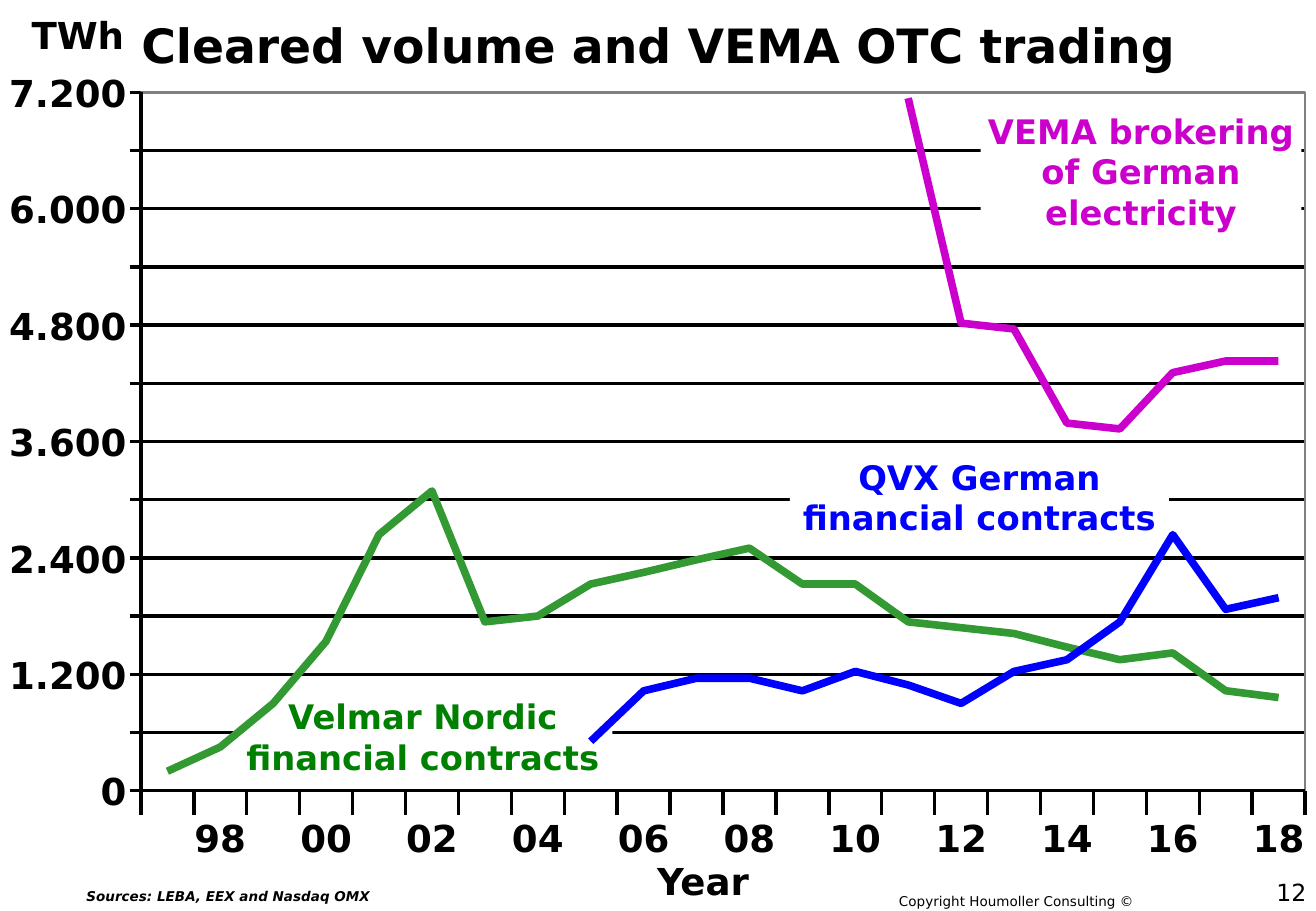
from pptx import Presentation
from pptx.dml.color import RGBColor
from pptx.enum.shapes import MSO_CONNECTOR as Connector, MSO_SHAPE as Shape
from pptx.enum.text import MSO_ANCHOR as Anchor, PP_ALIGN as Align
from pptx.oxml.ns import qn
from pptx.util import Inches, Pt
from lxml import etree

FONT = "DejaVu Sans"
BLACK, WHITE, GREY = "000000", "FFFFFF", "808080"
MAGENTA, GREEN, DARK_GREEN, BLUE = "CC00CC", "339933", "008000", "0000FF"

# Plot area in inches, value axis in TWh, one category per year
LEFT, TOP, WIDTH, HEIGHT = 1.16, 0.76, 9.58, 5.75
RIGHT, BOTTOM = LEFT + WIDTH, TOP + HEIGHT
AXIS_MAX, GRID_STEP, LABEL_STEP = 7200, 600, 1200
FIRST_YEAR, LAST_YEAR = 1997, 2018
YEAR_COUNT = LAST_YEAR - FIRST_YEAR + 1
YEAR_WIDTH = WIDTH / YEAR_COUNT

# First year and yearly volumes in TWh
BROKERED = (2011, [7140, 4820, 4760, 3790, 3730, 4310, 4430, 4430])
NORDIC = (1997, [200, 450, 900, 1540, 2640, 3090, 1740, 1800, 2130, 2250, 2380,
                 2500, 2130, 2130, 1740, 1680, 1620, 1480, 1350, 1420, 1030, 960])
GERMAN = (2005, [510, 1030, 1160, 1160, 1030, 1230, 1090, 900, 1230, 1350, 1740,
                 2640, 1870, 1990])


def colour(hex_string):
    return RGBColor.from_string(hex_string)


def year_left(year):
    return LEFT + (year - FIRST_YEAR) * YEAR_WIDTH


def value_top(value):
    return BOTTOM - value / AXIS_MAX * HEIGHT


class SlideBuilder:
    def __init__(self, presentation):
        self.slide = presentation.slides.add_slide(presentation.slide_layouts[5])
        self.shapes = self.slide.shapes

    def format_text(self, shape, text, size, color=BLACK, align=Align.CENTER,
                    bold=True, italic=False, anchor=Anchor.TOP):
        frame = shape.text_frame
        frame.text = text
        frame.word_wrap = False
        frame.vertical_anchor = anchor
        for paragraph in frame.paragraphs:
            paragraph.alignment = align
            for run in paragraph.runs:
                font = run.font
                font.name, font.size = FONT, Pt(size)
                font.bold, font.italic = bold, italic
                font.color.rgb = colour(color)

    def title(self, text, box):
        shape = self.shapes.title
        shape.left, shape.top, shape.width, shape.height = map(Inches, box)
        shape.fill.solid()
        shape.fill.fore_color.rgb = colour(WHITE)
        self.format_text(shape, text, 28, anchor=Anchor.MIDDLE)

    def text(self, text, box, size, inset=True, **style):
        shape = self.shapes.add_textbox(*map(Inches, box))
        if not inset:
            frame = shape.text_frame
            frame.margin_left = frame.margin_right = 0
            frame.margin_top = frame.margin_bottom = 0
        self.format_text(shape, text, size, **style)

    def line(self, x1, y1, x2, y2):
        connector = self.shapes.add_connector(
            Connector.STRAIGHT, *map(Inches, (x1, y1, x2, y2)))
        connector.line.color.rgb = colour(BLACK)
        connector.line.width = Pt(0)
        etree.SubElement(connector._element.spPr, qn("a:effectLst"))

    def frame(self, box):
        shape = self.shapes.add_shape(Shape.RECTANGLE, *map(Inches, box))
        shape.shadow.inherit = False
        shape.fill.background()
        shape.line.color.rgb = colour(GREY)
        shape.line.width = Pt(1.5)

    def series_label(self, text, box, color):
        shape = self.shapes.add_shape(Shape.RECTANGLE, *map(Inches, box))
        shape.shadow.inherit = False
        shape.fill.solid()
        shape.fill.fore_color.rgb = colour(WHITE)
        shape.line.fill.background()
        self.format_text(shape, text, 20, color)

    def series(self, first_year, values, color):
        points = [(Inches(year_left(year + 0.5)), Inches(value_top(value)))
                  for year, value in enumerate(values, first_year)]
        builder = self.shapes.build_freeform(*points[0])
        builder.add_line_segments(points[1:], close=False)
        shape = builder.convert_to_shape()
        shape.shadow.inherit = False
        shape.fill.background()
        shape.line.color.rgb = colour(color)
        shape.line.width = Pt(4.5)


def main():
    presentation = Presentation()
    presentation.slide_width, presentation.slide_height = Inches(10.83), Inches(7.5)
    builder = SlideBuilder(presentation)

    # Title
    builder.title("Cleared volume and VEMA OTC trading", (0, 0, 10.83, 0.74))

    # Value axis: labels, gridlines and ticks
    for value in range(0, AXIS_MAX + 1, LABEL_STEP):
        builder.text(f"{value:,}".replace(",", "."),
                     (0.05, value_top(value) - 0.18, 0.99, 0.37), 22,
                     inset=False, align=Align.RIGHT)
    builder.text("TWh", (0.15, 0.05, 0.98, 0.47), 22)
    for value in range(0, AXIS_MAX + 1, GRID_STEP):
        top = value_top(value)
        builder.line(LEFT, top, RIGHT, top)
        builder.line(LEFT - 0.09, top, LEFT, top)
    builder.frame((LEFT, TOP, WIDTH, HEIGHT))
    builder.line(LEFT, TOP, LEFT, BOTTOM)
    builder.line(LEFT, BOTTOM, RIGHT, BOTTOM)

    # Year axis: ticks and every second year
    for year in range(FIRST_YEAR, LAST_YEAR + 2):
        builder.line(year_left(year), BOTTOM + 0.2, year_left(year), BOTTOM)
    for year in range(FIRST_YEAR + 1, LAST_YEAR + 1, 2):
        builder.text(f"{year % 100:02d}",
                     (year_left(year), BOTTOM + 0.2, YEAR_WIDTH, 0.37), 22, inset=False)
    builder.text("Year", (5.29, 7.02, 0.99, 0.47), 22)

    # Series and their labels, each label above the grid
    builder.series(*BROKERED, MAGENTA)
    builder.series_label("Velmar Nordic\nfinancial contracts",
                         (1.92, 5.68, 3.12, 0.77), DARK_GREEN)
    builder.series(*NORDIC, GREEN)
    builder.series_label("QVX German\nfinancial contracts",
                         (6.5, 3.71, 3.12, 0.77), BLUE)
    builder.series(*GERMAN, BLUE)
    builder.series_label("VEMA brokering\nof German\nelectricity",
                         (8.07, 0.86, 2.64, 1.11), MAGENTA)

    # Footer
    builder.text("Sources: LEBA, EEX and Nasdaq OMX", (0.61, 7.26, 2.54, 0.24), 8,
                 italic=True)
    builder.text("Copyright Houmoller Consulting ©", (7.3, 7.3, 2.16, 0.24), 8,
                 align=Align.LEFT, bold=False)
    builder.text("12", (8.59, 7.09, 2.26, 0.5), 14, align=Align.RIGHT, bold=False,
                 anchor=Anchor.MIDDLE)

    presentation.save("out.pptx")


if __name__ == "__main__":
    main()
